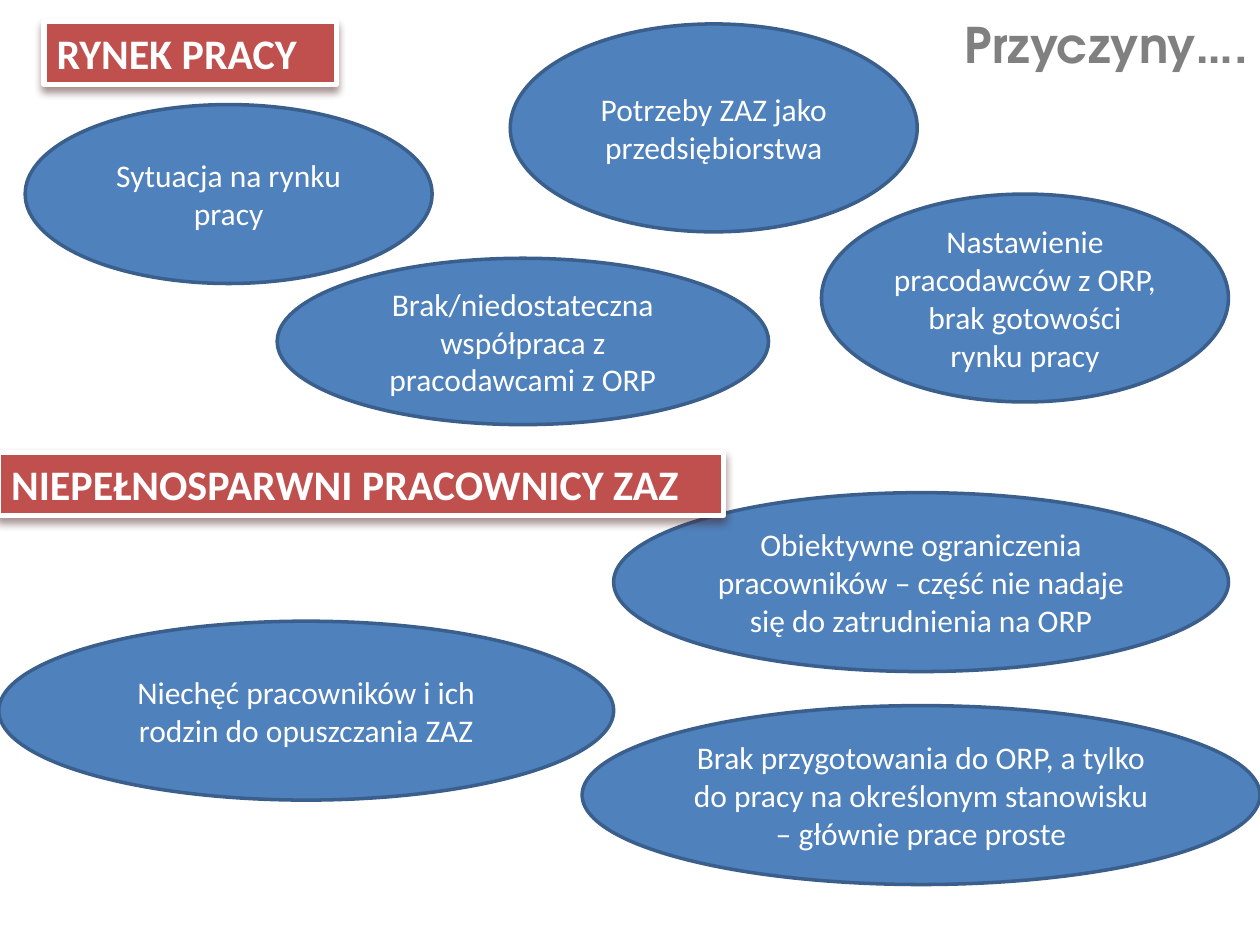
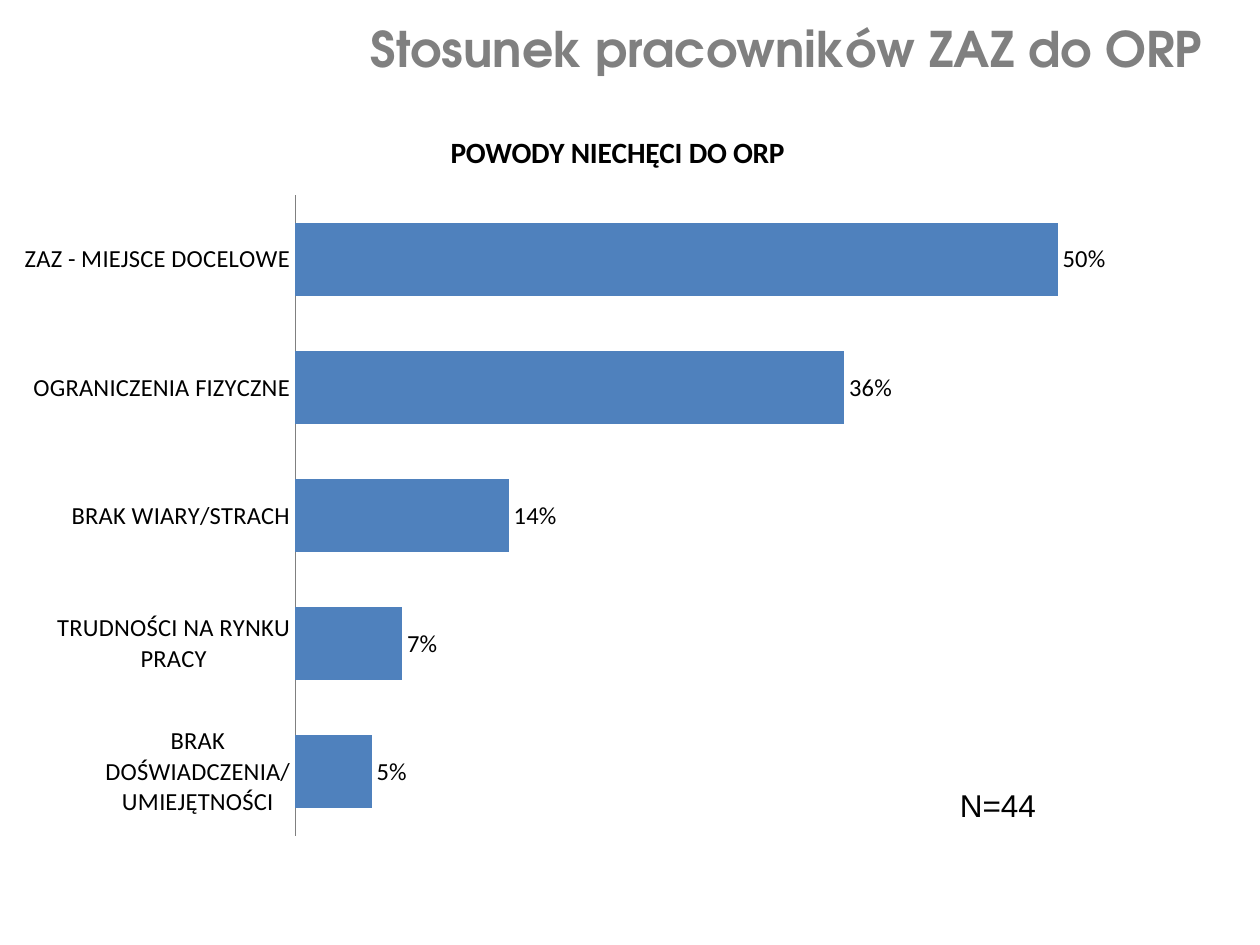
"""Build two slides on why workers rarely move from a ZAZ to the open labour market."""
import dataclasses

import lxml.etree
import pptx
import pptx.chart.data
import pptx.dml.color
import pptx.enum.chart
import pptx.enum.shapes
import pptx.enum.text
import pptx.oxml.ns
import pptx.util

Inches = pptx.util.Inches
Pt = pptx.util.Pt
Align = pptx.enum.text.PP_ALIGN
Anchor = pptx.enum.text.MSO_ANCHOR
AutoSize = pptx.enum.text.MSO_AUTO_SIZE
Shape = pptx.enum.shapes.MSO_SHAPE


@dataclasses.dataclass(frozen=True)
class Theme:
    """Colours, fonts and type sizes shared by the slides."""

    blue: str = "4F81BD"
    blue_edge: str = "3A5F8C"
    red: str = "C0504D"
    red_shadow: str = "441B1A"
    white: str = "FFFFFF"
    black: str = "000000"
    grey: str = "808080"
    title_font: str = "TeX Gyre Adventor"
    body_font: str = "Calibri"
    note_font: str = "Arial"
    title_size: float = 28
    heading_size: float = 24
    body_size: float = 18
    chart_title_size: float = 16.8
    chart_size: float = 14


THEME = Theme()
TITLE = {"name": THEME.title_font, "size": Pt(THEME.title_size), "bold": True, "color": THEME.grey}
HEADING = {"name": THEME.body_font, "size": Pt(THEME.heading_size), "bold": True, "color": THEME.white}
CAUSE = {"name": THEME.body_font, "size": Pt(THEME.body_size), "color": THEME.white}
NOTE = {"name": THEME.note_font, "size": Pt(THEME.body_size), "color": THEME.black}
CHART_TEXT = {"name": THEME.body_font, "size": Pt(THEME.chart_size), "color": THEME.black}
CHART_TITLE = {**CHART_TEXT, "size": Pt(THEME.chart_title_size), "bold": True}

MARKET_CAUSES = [
    ("Sytuacja na rynku pracy", (0.2, 0.83, 3.23, 1.42)),
    ("Potrzeby ZAZ jako przedsiębiorstwa", (4.05, 0.19, 3.23, 1.65)),
    ("Brak/niedostateczna współpraca z pracodawcami z ORP", (2.2, 2.05, 3.9, 1.32)),
    ("Nastawienie pracodawców z ORP, brak gotowości rynku pracy", (6.52, 1.54, 3.23, 1.65)),
]
WORKER_CAUSES = [
    ("Niechęć pracowników i ich rodzin do opuszczania ZAZ", (-0.01, 4.93, 4.88, 1.42)),
    ("Obiektywne ograniczenia pracowników – część nie nadaje się do zatrudnienia na ORP",
     (4.87, 3.91, 4.88, 1.42)),
    ("Brak przygotowania do ORP, a tylko do pracy na określonym stanowisku – głównie prace proste",
     (4.62, 5.6, 5.38, 1.42)),
]
RELUCTANCE = {
    "ZAZ - MIEJSCE DOCELOWE": 0.5,
    "OGRANICZENIA FIZYCZNE": 0.36,
    "BRAK WIARY/STRACH": 0.14,
    "TRUDNOŚCI NA RYNKU PRACY": 0.07,
    "BRAK DOŚWIADCZENIA/UMIEJĘTNOŚCI": 0.05,
}


def rgb(code):
    """Turn a hex code into a colour."""
    return pptx.dml.color.RGBColor.from_string(code)


def set_all(target, values):
    """Set each named attribute of the target."""
    for name, value in values.items():
        setattr(target, name, value)


def format_font(font, style):
    """Apply a text style to a font."""
    for name, value in style.items():
        if name == "color":
            font.color.rgb = rgb(value)
        else:
            setattr(font, name, value)


def write(box, text, style, align, frame_format):
    """Put one styled paragraph in a box."""
    set_all(box.text_frame, {"word_wrap": True, **frame_format})
    para = box.text_frame.paragraphs[0]
    para.alignment = align
    span = para.add_run()
    span.text = text
    format_font(span.font, style)


def add_text(page, text, place, style, align=Align.LEFT):
    """Add a text box that grows with its text."""
    box = page.shapes.add_textbox(*map(Inches, place))
    write(box, text, style, align, {"auto_size": AutoSize.SHAPE_TO_FIT_TEXT})


def add_title(page, text, left, top):
    """Add the right-aligned slide title."""
    add_text(page, text, (left, top, 9.92, 0.57), TITLE, Align.RIGHT)


def add_filled(group, kind, place, fill, edge, width):
    """Add a filled and outlined shape without a shadow."""
    box = group.shapes.add_shape(kind, *map(Inches, place))
    box.shadow.inherit = False
    box.fill.solid()
    box.fill.fore_color.rgb = rgb(fill)
    box.line.color.rgb = rgb(edge)
    box.line.width = Pt(width)
    return box


def add_cause(group, text, place):
    """Add a blue ellipse naming one cause."""
    box = add_filled(group, Shape.OVAL, place, THEME.blue, THEME.blue_edge, 2)
    write(box, text, CAUSE, Align.CENTER, {"vertical_anchor": Anchor.MIDDLE})


def add_shadow(box):
    """Give a shape a soft shadow below it."""
    qn = pptx.oxml.ns.qn
    effects = box.element.spPr.find(qn("a:effectLst"))
    shadow = lxml.etree.SubElement(
        effects, qn("a:outerShdw"), blurRad=str(Pt(4.5)), dist=str(Pt(3)), dir="5400000", rotWithShape="0")
    color = lxml.etree.SubElement(shadow, qn("a:srgbClr"), val=THEME.red_shadow)
    lxml.etree.SubElement(color, qn("a:alpha"), val="48000")


def add_heading(group, text, place):
    """Add a red heading band."""
    box = add_filled(group, Shape.RECTANGLE, place, THEME.red, THEME.white, 3)
    add_shadow(box)
    write(box, text, HEADING, Align.LEFT,
          {"vertical_anchor": Anchor.TOP, "auto_size": AutoSize.SHAPE_TO_FIT_TEXT})


def add_cause_group(page, heading, heading_place, causes):
    """Add a group of causes under its heading."""
    group = page.shapes.add_group_shape()
    for text, place in causes:
        add_cause(group, text, place)
    add_heading(group, heading, heading_place)


def add_bar_chart(page, title, shares, place):
    """Add a horizontal bar chart of shares."""
    data = pptx.chart.data.CategoryChartData(number_format="###0%")
    data.categories = list(shares)
    data.add_series("Series 1", list(shares.values()))
    kind = pptx.enum.chart.XL_CHART_TYPE.BAR_CLUSTERED
    chart = page.shapes.add_chart(kind, *map(Inches, place), data).chart
    chart.has_legend = False
    format_font(chart.font, CHART_TEXT)
    chart.has_title = True
    chart.chart_title.include_in_layout = False
    span = chart.chart_title.text_frame.paragraphs[0].add_run()
    span.text = title
    format_font(span.font, CHART_TITLE)

    no_tick = pptx.enum.chart.XL_TICK_MARK.NONE
    set_all(chart.category_axis, {"reverse_order": True, "major_tick_mark": no_tick,
                                  "has_major_gridlines": False})
    chart.category_axis.format.line.color.rgb = rgb(THEME.grey)
    set_all(chart.value_axis, {"visible": False, "has_major_gridlines": False,
                               "minimum_scale": 0, "maximum_scale": 0.6})

    plot = chart.plots[0]
    set_all(plot, {"gap_width": 75, "overlap": -25, "vary_by_categories": False,
                   "has_data_labels": True})
    set_all(plot.data_labels, {"show_value": True, "number_format": "###0%",
                               "number_format_is_linked": False,
                               "position": pptx.enum.chart.XL_LABEL_POSITION.OUTSIDE_END})
    format_font(plot.data_labels.font, CHART_TEXT)
    bars = plot.series[0]
    bars.invert_if_negative = False
    bars.format.fill.solid()
    bars.format.fill.fore_color.rgb = rgb(THEME.blue)


def build_causes(page):
    """Fill the slide of causes."""
    add_title(page, "Przyczyny….", 0.08, 0.07)
    add_cause_group(page, "RYNEK PRACY", (0.35, 0.17, 2.32, 0.5), MARKET_CAUSES)
    add_cause_group(page, "NIEPEŁNOSPARWNI PRACOWNICY ZAZ", (-0.01, 3.59, 5.75, 0.5), WORKER_CAUSES)


def build_attitudes(page):
    """Fill the slide of worker attitudes."""
    add_bar_chart(page, "POWODY NIECHĘCI DO ORP", RELUCTANCE, (0, 0.84, 9.8, 5.91))
    add_title(page, "Stosunek pracowników ZAZ do ORP", -0.28, 0.1)
    add_text(page, "N=44", (7.52, 6.19, 0.94, 0.4), NOTE)


def main():
    """Build and save the deck."""
    deck = pptx.Presentation()
    set_all(deck, {"slide_width": Inches(10), "slide_height": Inches(7.5)})
    for build in (build_causes, build_attitudes):
        build(deck.slides.add_slide(deck.slide_layouts[6]))
    deck.save("out.pptx")


if __name__ == "__main__":
    main()
